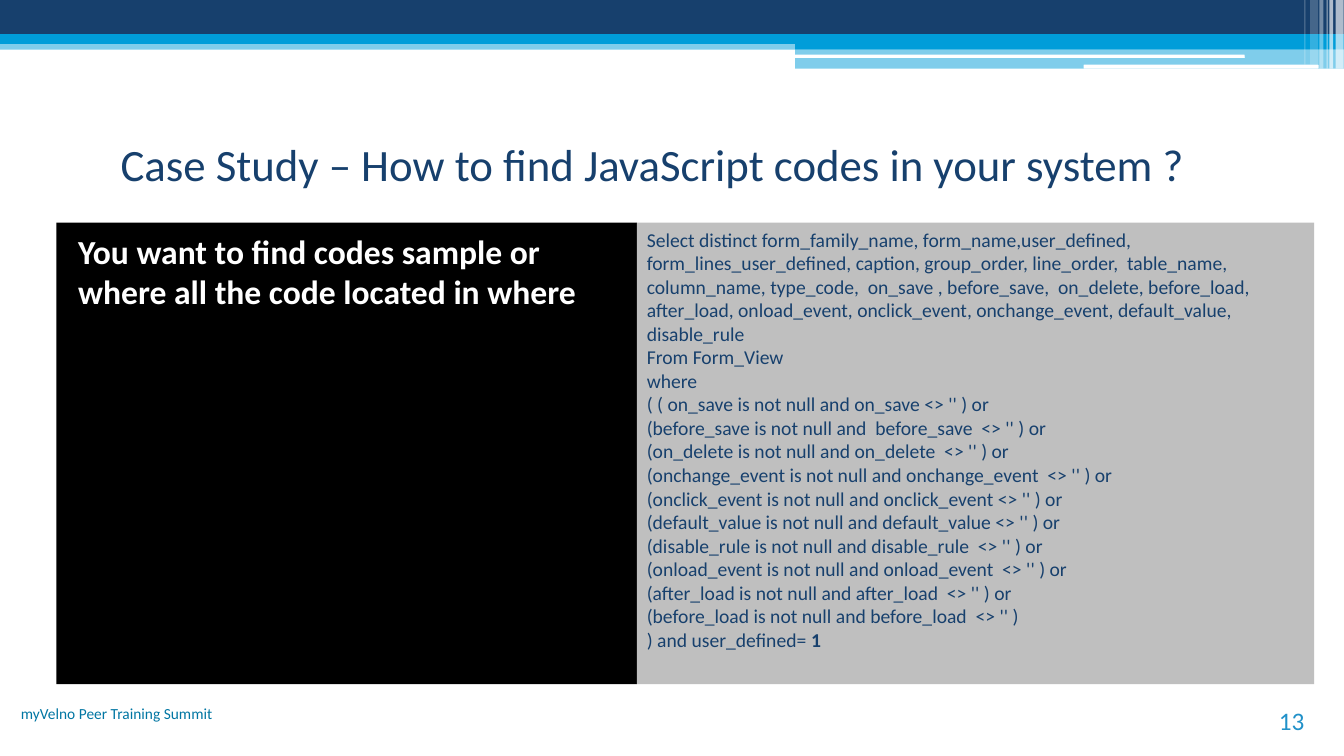
from lxml import etree
from pptx import Presentation
from pptx.dml.color import RGBColor
from pptx.enum.shapes import MSO_SHAPE
from pptx.enum.text import MSO_ANCHOR, PP_ALIGN
from pptx.oxml.ns import qn
from pptx.util import Cm, Pt

RECT, ROUNDED = MSO_SHAPE.RECTANGLE, MSO_SHAPE.ROUNDED_RECTANGLE
LEFT, CENTER, RIGHT = PP_ALIGN.LEFT, PP_ALIGN.CENTER, PP_ALIGN.RIGHT
TOP, MIDDLE, BOTTOM = MSO_ANCHOR.TOP, MSO_ANCHOR.MIDDLE, MSO_ANCHOR.BOTTOM

# Content
TITLE = "Case Study – How to find JavaScript codes in your system ?"
QUESTION = "You want to find codes sample or where all the code located in where"
QUERY = [
    "Select distinct form_family_name, form_name,user_defined, "
    "form_lines_user_defined, caption, group_order, line_order,  table_name, "
    "column_name, type_code,  on_save , before_save,  on_delete, before_load, "
    "after_load, onload_event, onclick_event, onchange_event, default_value,  "
    "disable_rule",
    "From Form_View",
    "where",
    "( ( on_save is not null and on_save <> '' ) or",
    "(before_save is not null and  before_save  <> '' ) or",
    "(on_delete is not null and on_delete  <> '' ) or",
    "(onchange_event is not null and onchange_event  <> '' ) or",
    "(onclick_event is not null and onclick_event <> '' ) or",
    "(default_value is not null and default_value <> '' ) or",
    "(disable_rule is not null and disable_rule  <> '' ) or",
    "(onload_event is not null and onload_event  <> '' ) or",
    "(after_load is not null and after_load  <> '' ) or",
    "(before_load is not null and before_load  <> '' )",
    ") and user_defined= ",
]
QUERY_FLAG = "1"
FOOTER = "myVelno Peer Training Summit"
PAGE_NUMBER = "13"

FONT = "Calibri"
COLORS = {
    "navy": "17406D", "blue": "009DD9", "white": "FFFFFF", "black": "000000",
    "gray": "BFBFBF", "footer": "0076A3", "number": "2191C9",
}

# Header: shape, left, top, width, height (cm), colour, opacity in percent
SLIDE_W, SLIDE_H = 33.87, 19.05
STEP_X = 20.04
STEP_W = SLIDE_W - STEP_X
BANDS = [
    (RECT, 0, 1.02, SLIDE_W, 0.23, "blue", 50),
    (RECT, 0, 0, SLIDE_W, 0.86, "navy", 100),
    (RECT, 0, 0.86, SLIDE_W, 0.25, "blue", 100),
    (RECT, STEP_X, 0.99, STEP_W, 0.25, "blue", 100),
    (RECT, STEP_X, 1.23, STEP_W, 0.5, "blue", 50),
    (ROUNDED, 20.02, 1.38, 11.35, 0.08, "white", 100),
    (ROUNDED, 27.31, 1.63, 5.92, 0.1, "white", 100),
]
# Stripes: left, width, height (cm), opacity in percent
STRIPES = [
    (33.66, 0.2, 1.73, 65), (33.5, 0.1, 1.73, 65), (33.43, 0.03, 1.73, 60),
    (33.25, 0.1, 1.73, 40), (33.02, 0.2, 1.63, 20), (32.87, 0.03, 1.63, 30),
]

# Two panels side by side
PANEL_X, PANEL_Y, PANEL_H = 1.42, 5.61, 11.63
QUESTION_W, QUERY_W = 14.63, 17.07


def color(name):
    return RGBColor.from_string(COLORS[name])


def add_block(slide, kind, left, top, width, height, fill, opacity=100):
    block = slide.shapes.add_shape(kind, Cm(left), Cm(top), Cm(width), Cm(height))
    block.shadow.inherit = False
    block.line.fill.background()
    block.fill.solid()
    block.fill.fore_color.rgb = color(fill)
    if opacity < 100:
        hue = block.fill._xPr.find(".//" + qn("a:srgbClr"))
        etree.SubElement(hue, qn("a:alpha")).set("val", str(opacity * 1000))
    return block


def write(frame, lines, size, hue, align=LEFT, anchor=TOP, bold=False):
    frame.word_wrap = True
    frame.vertical_anchor = anchor
    frame.text = "\n".join(lines)
    for paragraph in frame.paragraphs:
        paragraph.alignment = align
        for run in paragraph.runs:
            style(run, size, hue, bold)


def style(run, size, hue, bold):
    run.font.name = FONT
    run.font.size = Pt(size)
    run.font.bold = bold
    run.font.color.rgb = color(hue)


def main():
    deck = Presentation()
    deck.slide_width, deck.slide_height = Cm(SLIDE_W), Cm(SLIDE_H)
    slide = deck.slides.add_slide(deck.slide_layouts[5])

    # Header bands and stripes
    for band in BANDS:
        add_block(slide, *band)
    for left, width, height, opacity in STRIPES:
        add_block(slide, RECT, left, 0, width, height, "white", opacity)

    # Title
    title = slide.shapes.title
    title.left, title.top = Cm(PANEL_X), Cm(2.64)
    title.width, title.height = Cm(30.05), Cm(2.97)
    write(title.text_frame, [TITLE], 32, "navy", CENTER, MIDDLE)

    # Question panel
    question = add_block(slide, RECT, PANEL_X, PANEL_Y, QUESTION_W, PANEL_H, "black")
    write(question.text_frame, [QUESTION], 24, "white", bold=True)
    question.text_frame.margin_left = Cm(0.55)
    question.text_frame.margin_top = Cm(0.2)

    # Query panel
    query = add_block(slide, RECT, PANEL_X + QUESTION_W, PANEL_Y, QUERY_W, PANEL_H, "gray")
    write(query.text_frame, QUERY, 14, "navy")
    flag = query.text_frame.paragraphs[-1].add_run()
    flag.text = QUERY_FLAG
    style(flag, 14, "navy", True)

    # Footer and page number
    footer = slide.shapes.add_textbox(Cm(0), Cm(17.63), Cm(5.61), Cm(1.27))
    write(footer.text_frame, [FOOTER], 11, "footer", RIGHT)
    number = slide.shapes.add_textbox(Cm(30.3), Cm(17.65), Cm(2.82), Cm(1.02))
    write(number.text_frame, [PAGE_NUMBER], 18, "number", RIGHT, BOTTOM)

    deck.save("out.pptx")


if __name__ == "__main__":
    main()
